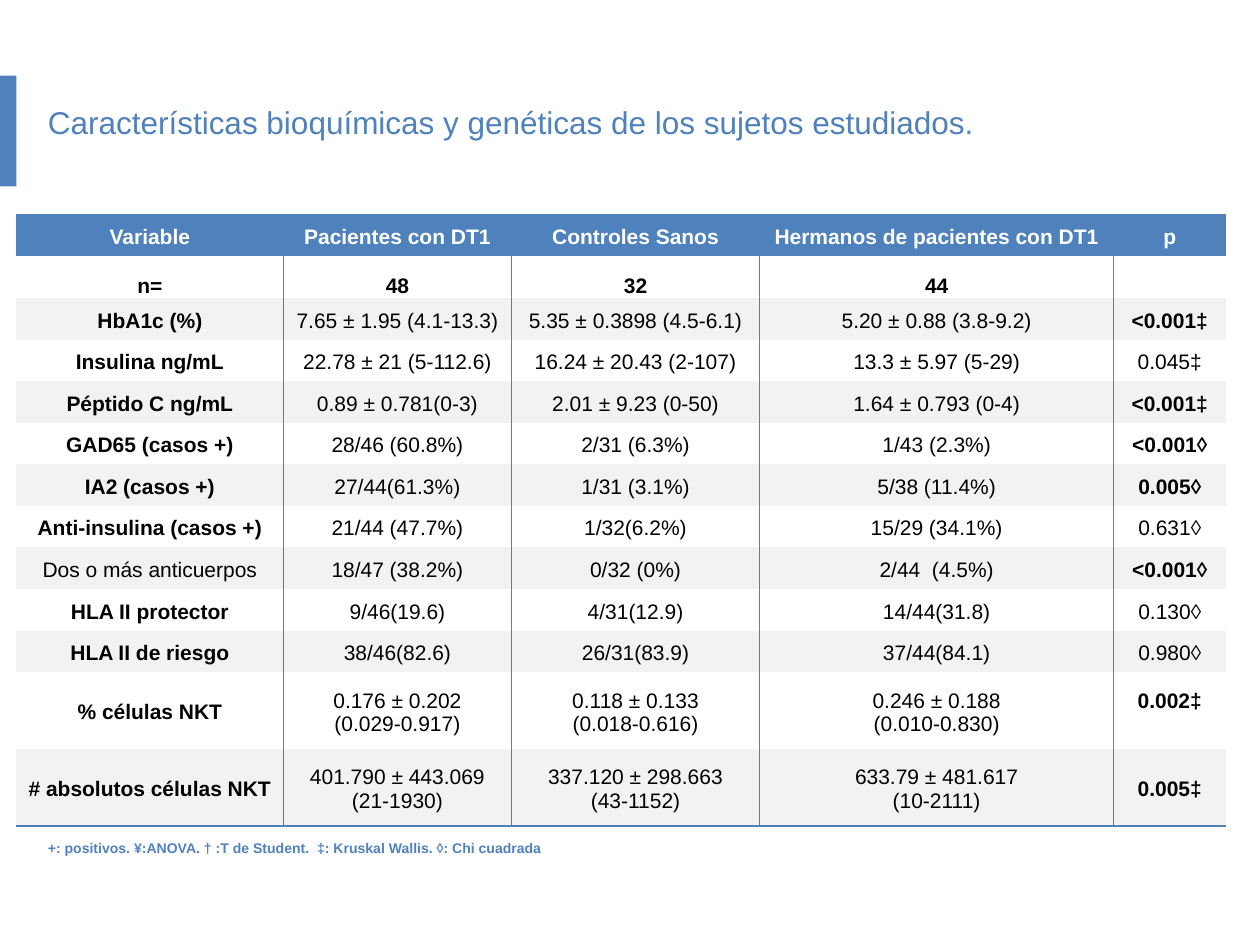
import pptx
import pptx.dml.color
import pptx.enum.shapes
import pptx.enum.text
import pptx.oxml
import pptx.oxml.ns
import pptx.util

Inches = pptx.util.Inches
Anchor = pptx.enum.text.MSO_ANCHOR
Align = pptx.enum.text.PP_ALIGN

BLUE, GREY, BLACK, WHITE = "4F81BD", "F2F2F2", "000000", "FFFFFF"
NO_STYLE = "{2D5ABB26-0587-4C30-8999-92F81FD0307C}"
TITLE = "Características bioquímicas y genéticas de los sujetos estudiados."
FOOTNOTE = "+: positivos. ¥:ANOVA. † :T de Student.  ‡: Kruskal Wallis. ◊: Chi cuadrada"
COLUMN_WIDTHS = [2.12, 1.81, 1.97, 2.81, 0.89]
ROW_HEIGHT, TALL_ROW_HEIGHT = 0.33, 0.61

# A line break inside a value starts a new paragraph
ROWS = [
    ("Variable", "Pacientes con DT1", "Controles Sanos", "Hermanos de pacientes con DT1", "p"),
    ("n=", "48", "32", "44", ""),
    ("HbA1c (%)", "7.65 ± 1.95 (4.1-13.3)", "5.35 ± 0.3898 (4.5-6.1)", "5.20 ± 0.88 (3.8-9.2)", "<0.001‡"),
    ("Insulina ng/mL", "22.78 ± 21 (5-112.6)", "16.24 ± 20.43 (2-107)", "13.3 ± 5.97 (5-29)", "0.045‡"),
    ("Péptido C ng/mL", "0.89 ± 0.781(0-3)", "2.01 ± 9.23 (0-50)", "1.64 ± 0.793 (0-4)", "<0.001‡"),
    ("GAD65 (casos +)", "28/46 (60.8%)", "2/31 (6.3%)", "1/43 (2.3%)", "<0.001◊"),
    ("IA2 (casos +)", "27/44(61.3%)", "1/31 (3.1%)", "5/38 (11.4%)", "0.005◊"),
    ("Anti-insulina (casos +)", "21/44 (47.7%)", "1/32(6.2%)", "15/29 (34.1%)", "0.631◊"),
    ("Dos o más anticuerpos", "18/47 (38.2%)", "0/32 (0%)", "2/44  (4.5%)", "<0.001◊"),
    ("HLA II protector", "9/46(19.6)", "4/31(12.9)", "14/44(31.8)", "0.130◊"),
    ("HLA II de riesgo", "38/46(82.6)", "26/31(83.9)", "37/44(84.1)", "0.980◊"),
    ("% células NKT", "0.176 ± 0.202\n(0.029-0.917)", "0.118 ± 0.133\n(0.018-0.616)",
     "0.246 ± 0.188\n(0.010-0.830)", "0.002‡"),
    ("# absolutos células NKT", "401.790 ± 443.069\n(21-1930)", "337.120 ± 298.663\n(43-1152)",
     "633.79 ± 481.617\n(10-2111)", "0.005‡"),
]


def rgb(color):
    return pptx.dml.color.RGBColor.from_string(color)


def add_run(paragraph, text, size, color, bold=False):
    run = paragraph.add_run()
    run.text = text
    run.font.name = "Arial"
    run.font.size = pptx.util.Pt(size)
    run.font.bold = bold
    run.font.color.rgb = rgb(color)


def write_cell(cell, text, size, color, bold=False, align=Align.CENTER):
    for index, line in enumerate(text.split("\n") if text else []):
        frame = cell.text_frame
        paragraph = frame.add_paragraph() if index else frame.paragraphs[0]
        paragraph.alignment = align
        add_run(paragraph, line, size, color, bold)


def format_cell(cell, fill=None, anchor=Anchor.MIDDLE):
    cell.vertical_anchor = anchor
    cell.margin_left = cell.margin_right = Inches(0.07)
    cell.margin_top, cell.margin_bottom = Inches(0.03), 0
    if fill:
        cell.fill.solid()
        cell.fill.fore_color.rgb = rgb(fill)
    else:
        cell.fill.background()


def add_borders(cell, sides):
    """Draw blue borders; sides are given in the order L, R, T, B."""
    properties = cell._tc.get_or_add_tcPr()
    for index, side in enumerate(sides):
        border = pptx.oxml.parse_xml(
            f'<a:ln{side} {pptx.oxml.ns.nsdecls("a")} w="12700"><a:solidFill>'
            f'<a:srgbClr val="{BLUE}"/></a:solidFill></a:ln{side}>')
        properties.insert(index, border)


def is_bold(row, column, text):
    if row < 2:
        return True
    if column == 0:
        return not text.startswith("Dos")
    return column == 4 and text.startswith(("<", "0.00"))


def add_title(slide):
    title = slide.shapes.title
    title.left, title.top = Inches(0.28), Inches(0.77)
    title.width, title.height = Inches(7.56), Inches(0.4)
    title.text_frame.vertical_anchor = Anchor.TOP
    title.text_frame.auto_size = pptx.enum.text.MSO_AUTO_SIZE.NONE
    paragraph = title.text_frame.paragraphs[0]
    paragraph.alignment = Align.LEFT
    add_run(paragraph, TITLE, 18, BLUE)


def add_accent_bar(slide):
    bar = slide.shapes.add_shape(pptx.enum.shapes.MSO_SHAPE.RECTANGLE,
                                 0, Inches(0.6), Inches(0.13), Inches(0.88))
    bar.shadow.inherit = False
    bar.fill.solid()
    bar.fill.fore_color.rgb = rgb(BLUE)
    bar.line.fill.background()


def add_results_table(slide):
    last = len(ROWS) - 1
    frame = slide.shapes.add_table(len(ROWS) + 1, len(COLUMN_WIDTHS),
                                   Inches(0.13), Inches(1.7), Inches(9.6), Inches(5.2))
    table = frame.table
    table.first_row = table.horz_banding = False
    table._tbl.tblPr.find(pptx.oxml.ns.qn("a:tableStyleId")).text = NO_STYLE
    for column, width in zip(table.columns, COLUMN_WIDTHS):
        column.width = Inches(width)

    # Header and data rows
    for row, values in enumerate(ROWS):
        tall = any("\n" in value for value in values)
        table.rows[row].height = Inches(TALL_ROW_HEIGHT if tall else ROW_HEIGHT)
        fill = BLUE if row == 0 else GREY if row % 2 == 0 else None
        anchor = Anchor.BOTTOM if row == 1 else Anchor.MIDDLE
        for column, text in enumerate(values):
            cell = table.cell(row, column)
            write_cell(cell, text, 12, BLACK if row else WHITE, is_bold(row, column, text))
            format_cell(cell, fill, anchor)
            sides = ("L" if column else "") + ("R" if column < 4 else "")
            add_borders(cell, sides + ("B" if row == last else ""))
    # The NKT percentage p value sits level with the first line of its row
    table.cell(last - 1, 4).margin_bottom = Inches(0.18)

    # Footnote row
    table.rows[last + 1].height = Inches(ROW_HEIGHT)
    footnote = table.cell(last + 1, 0)
    footnote.merge(table.cell(last + 1, 4))
    write_cell(footnote, FOOTNOTE, 8, BLUE, True, Align.LEFT)
    format_cell(footnote)
    footnote.margin_left = Inches(0.25)
    for column in range(len(COLUMN_WIDTHS)):
        add_borders(table.cell(last + 1, column), "T")


def main():
    presentation = pptx.Presentation()
    presentation.slide_width, presentation.slide_height = Inches(10), Inches(7.5)
    slide = presentation.slides.add_slide(presentation.slide_layouts[5])
    add_results_table(slide)
    add_title(slide)
    add_accent_bar(slide)
    presentation.save("out.pptx")


if __name__ == "__main__":
    main()
